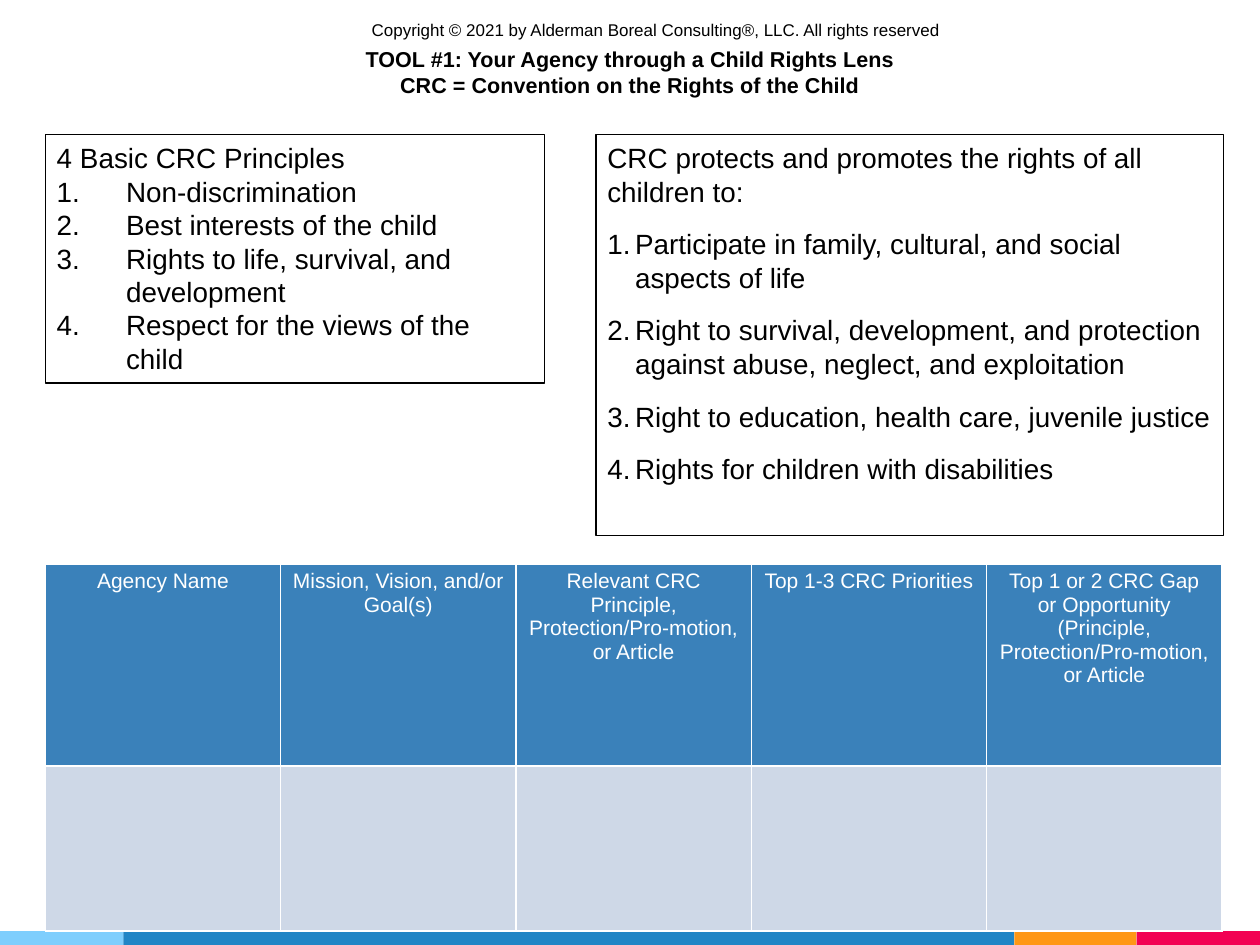
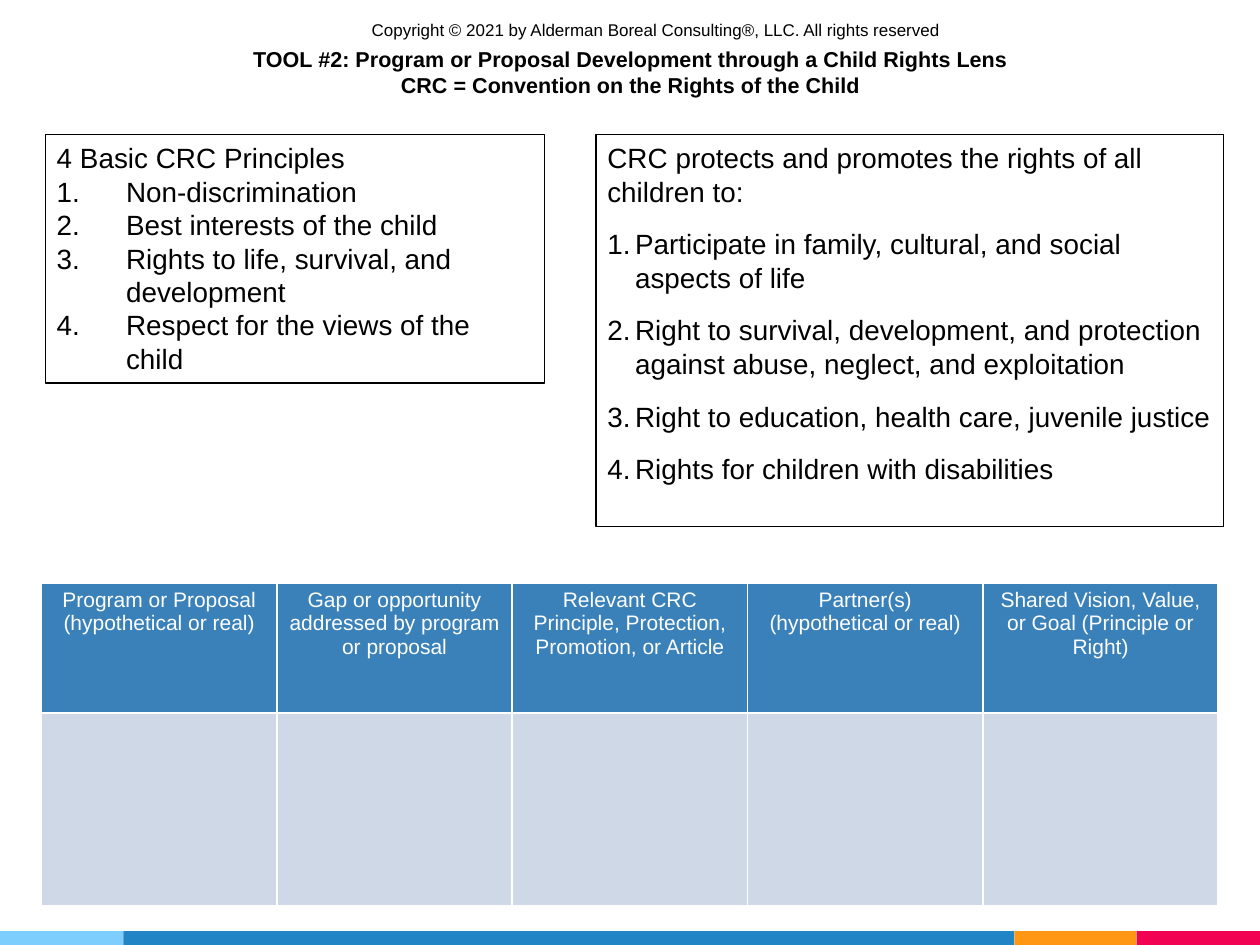
from dataclasses import dataclass

from lxml.etree import SubElement
from pptx import Presentation
from pptx.dml.color import RGBColor
from pptx.enum.shapes import MSO_SHAPE
from pptx.enum.text import MSO_ANCHOR, MSO_AUTO_SIZE, PP_ALIGN
from pptx.oxml.ns import qn
from pptx.util import Inches, Pt

RECT = MSO_SHAPE.RECTANGLE
LEFT, CENTER = PP_ALIGN.LEFT, PP_ALIGN.CENTER
TOP, MIDDLE = MSO_ANCHOR.TOP, MSO_ANCHOR.MIDDLE
NO_FIT = MSO_AUTO_SIZE.NONE

BLACK = RGBColor(0x00, 0x00, 0x00)
WHITE = RGBColor(0xFF, 0xFF, 0xFF)
SKY = RGBColor(0x7E, 0xCE, 0xFD)
BLUE = RGBColor(0x21, 0x85, 0xC5)
ORANGE = RGBColor(0xFF, 0x97, 0x15)
RED = RGBColor(0xF2, 0x02, 0x53)
HEAD = RGBColor(0x3A, 0x81, 0xBA)
PALE = RGBColor(0xCE, 0xD8, 0xE7)

FONT = "Arial"
RIGHTS = "Copyright © 2021 by Alderman Boreal Consulting®, LLC. All rights reserved"
BANDS = ((0.98, SKY), (7.07, BLUE), (0.97, ORANGE), (0.98, RED))
BAND_TOP, BAND_TALL = 7.39, 0.11
GRID_WIDE = 9.34
SIDES = ("a:lnL", "a:lnR", "a:lnT", "a:lnB")


@dataclass(frozen=True)
class Box:
    left: float
    top: float
    width: float
    height: float

    def lengths(self) -> list:
        return [Inches(n) for n in (self.left, self.top, self.width, self.height)]


@dataclass(frozen=True)
class Style:
    size: float
    color: RGBColor = BLACK
    bold: bool = False
    align: PP_ALIGN = LEFT
    before: float = 0


@dataclass(frozen=True)
class Panel:
    lead: str
    items: tuple
    indent: float
    style: Style


@dataclass(frozen=True)
class Tool:
    title: str
    title_box: Box
    rights_tall: float
    left: float
    top: float
    rows: tuple
    heads: tuple


TITLE = Style(12.3, bold=True, align=CENTER)
NOTE = Style(9.7)
CELL = Style(12, WHITE, align=CENTER)

BASICS = Panel(
    "4 Basic CRC Principles",
    (
        "Non-discrimination",
        "Best interests of the child",
        "Rights to life, survival, and development",
        "Respect for the views of the child",
    ),
    0.55,
    Style(15.9),
)
CLAIMS = Panel(
    "CRC protects and promotes the rights of all children to:",
    (
        "Participate in family, cultural, and social aspects of life",
        "Right to survival, development, and protection against abuse, neglect, and exploitation",
        "Right to education, health care, juvenile justice",
        "Rights for children with disabilities",
    ),
    0.22,
    Style(15.9, before=11),
)
TOOLS = (
    Tool(
        "TOOL #1: Your Agency through a Child Rights Lens",
        Box(2.78, 0.31, 4.44, 0.52),
        3.18, 0.36, 4.48, (1.6, 1.31),
        (
            "Agency Name",
            "Mission, Vision, and/or Goal(s)",
            "Relevant CRC Principle, Protection/Pro-motion, or Article",
            "Top 1-3 CRC Priorities",
            "Top 1 or 2 CRC Gap or Opportunity (Principle, Protection/Pro-motion, or Article",
        ),
    ),
    Tool(
        "TOOL #2: Program or Proposal Development through a Child Rights Lens",
        Box(1.89, 0.31, 6.23, 0.52),
        3.11, 0.33, 4.63, (1.03, 1.53),
        (
            "Program or Proposal (hypothetical or real)",
            "Gap or opportunity addressed by program or proposal",
            "Relevant CRC Principle, Protection, Promotion, or Article",
            "Partner(s)\n(hypothetical or real)",
            "Shared Vision, Value, or Goal (Principle or Right)",
        ),
    ),
)


def assign(target, values: dict) -> None:
    for name, value in values.items():
        setattr(target, name, value)


def write(frame, lines, style: Style) -> None:
    frame.text = "\n".join(lines)
    for para in frame.paragraphs:
        assign(para, {"alignment": style.align, "space_before": Pt(style.before)})
        for run in para.runs:
            assign(run.font, {"name": FONT, "size": Pt(style.size), "bold": style.bold})
            run.font.color.rgb = style.color


def place(shape, box: Box, wrap: bool, anchor: MSO_ANCHOR) -> None:
    assign(shape, dict(zip(("left", "top", "width", "height"), box.lengths())))
    assign(shape.text_frame, {
        "word_wrap": wrap,
        "auto_size": NO_FIT,
        "vertical_anchor": anchor,
        "margin_left": Inches(0.09),
        "margin_right": Inches(0.09),
        "margin_top": Inches(0.05),
        "margin_bottom": Inches(0.05),
    })


def add_bands(slide, master) -> None:
    left = 0
    for width, color in BANDS:
        band = slide.shapes.add_shape(
            RECT, *Box(left, BAND_TOP, width, BAND_TALL).lengths())
        band.shadow.inherit = False
        band.fill.solid()
        band.fill.fore_color.rgb = color
        band.line.fill.background()
        master.element.cSld.spTree.append(band.element)
        left += width


def fill_panel(shape, panel: Panel, box: Box) -> None:
    place(shape, box, True, TOP)
    shape.line.color.rgb = BLACK
    shape.line.width = Pt(0.75)
    write(shape.text_frame, (panel.lead, *panel.items), panel.style)
    for rank, para in enumerate(shape.text_frame.paragraphs):
        props = para._p.get_or_add_pPr()
        indent = Inches(panel.indent) if rank else 0
        props.set("marL", str(indent))
        props.set("indent", str(-indent))
        if rank:
            SubElement(props, qn("a:buAutoNum"), type="arabicPeriod")
        else:
            SubElement(props, qn("a:buNone"))


def paint_cell(cell, color: RGBColor) -> None:
    props = cell._tc.get_or_add_tcPr()
    for side in SIDES:
        line = SubElement(props, qn(side), w=str(Pt(1)))
        fill = SubElement(line, qn("a:solidFill"))
        SubElement(fill, qn("a:srgbClr"), val=str(WHITE))
    cell.fill.solid()
    cell.fill.fore_color.rgb = color
    assign(cell, {
        "margin_left": Inches(0.09),
        "margin_right": Inches(0.09),
        "margin_top": Inches(0.04),
        "margin_bottom": Inches(0.04),
    })


def add_grid(slide, tool: Tool) -> None:
    box = Box(tool.left, tool.top, GRID_WIDE, sum(tool.rows))
    count = len(tool.heads)
    grid = slide.shapes.add_table(len(tool.rows), count, *box.lengths()).table
    for col in grid.columns:
        col.width = Inches(GRID_WIDE / count)
    for row, height, color in zip(grid.rows, tool.rows, (HEAD, PALE)):
        row.height = Inches(height)
        for cell in row.cells:
            paint_cell(cell, color)
    for cell, head in zip(grid.rows[0].cells, tool.heads):
        write(cell.text_frame, head.split("\n"), CELL)


def fill_slide(slide, tool: Tool) -> None:
    title, basics, claims = slide.placeholders
    place(title, tool.title_box, False, MIDDLE)
    write(title.text_frame,
          (tool.title, "CRC = Convention on the Rights of the Child"), TITLE)
    fill_panel(basics, BASICS, Box(0.36, 1.07, 3.96, 1.97))
    fill_panel(claims, CLAIMS, Box(4.73, 1.07, 4.98, tool.rights_tall))
    add_grid(slide, tool)
    box = Box(2.86, 0.11, 4.77, 0.26)
    note = slide.shapes.add_textbox(*box.lengths())
    place(note, box, False, TOP)
    write(note.text_frame, (RIGHTS,), NOTE)


def main() -> None:
    deck = Presentation()
    deck.slide_width, deck.slide_height = Inches(10), Inches(7.5)
    slides = [deck.slides.add_slide(deck.slide_layouts[3]) for _ in TOOLS]
    add_bands(slides[0], deck.slide_master)
    for slide, tool in zip(slides, TOOLS):
        fill_slide(slide, tool)
    deck.save("out.pptx")


if __name__ == "__main__":
    main()
